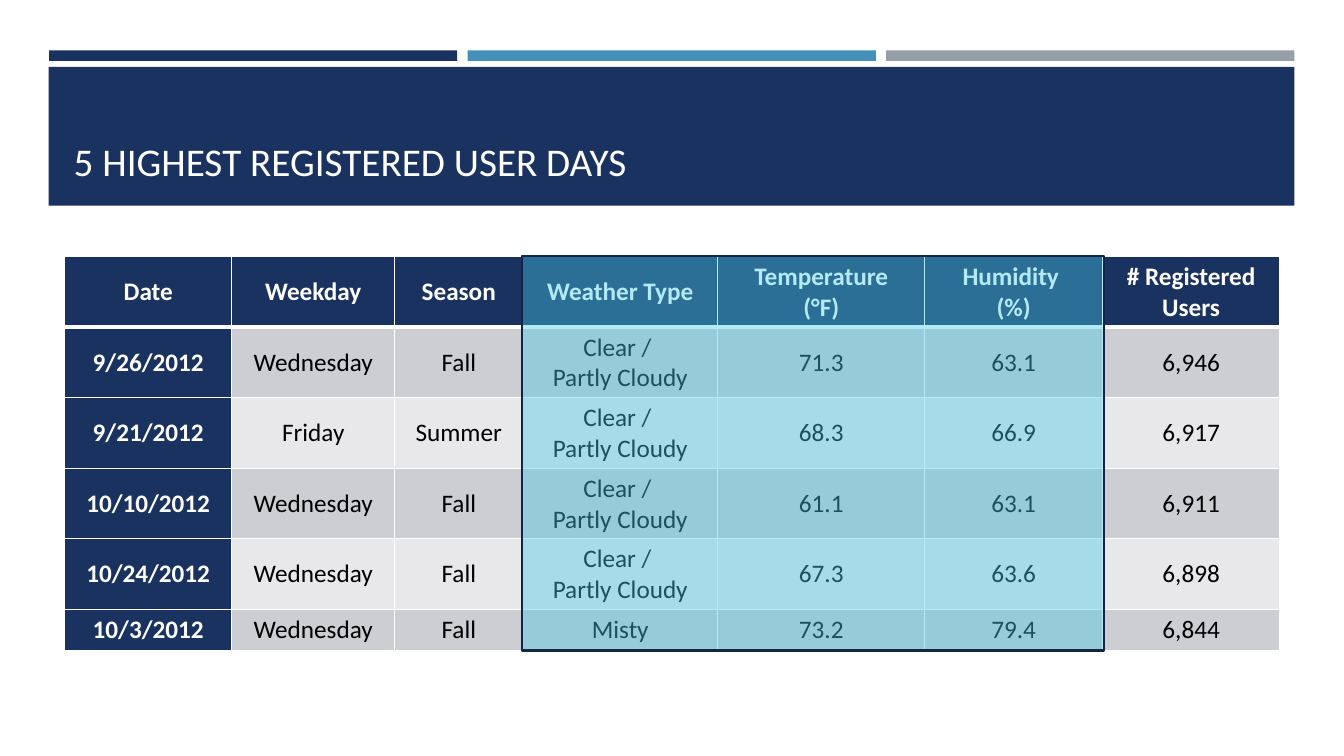
from dataclasses import dataclass

from pptx import Presentation
from pptx import util as u
from pptx.dml import color
from pptx.enum import shapes, text
from pptx.oxml import parse_xml
from pptx.oxml import ns


@dataclass(frozen=True)
class Theme:
    font: str = "Calibri"
    title: float = 28
    body: float = 18
    navy: str = "1A3260"
    blue: str = "4590B8"
    gray: str = "969FA7"
    white: str = "FFFFFF"
    black: str = "000000"
    odd: str = "CDCED2"
    even: str = "E8E8EA"
    glow: str = "45CBE8"
    edge: str = "132547"


class Deck:
    """Draws styled elements on the current slide, with lengths in points."""

    def __init__(self, theme, width, height):
        self.theme = theme
        self.prs = Presentation()
        self.prs.slide_width = u.Pt(width)
        self.prs.slide_height = u.Pt(height)
        self.slide = self.prs.slides.add_slide(self.prs.slide_layouts[6])

    def paint(self, fill, hue):
        fill.solid()
        fill.fore_color.rgb = color.RGBColor.from_string(hue)

    def rect(self, box, hue, alpha=None, line=None, weight=1):
        shape = self.slide.shapes.add_shape(
            shapes.MSO_SHAPE.RECTANGLE, *map(u.Pt, box))
        shape.shadow.inherit = False
        self.paint(shape.fill, hue)
        if alpha is not None:
            tone = shape._element.spPr.find(".//" + ns.qn("a:srgbClr"))
            tone.append(parse_xml(
                f'<a:alpha {ns.nsdecls("a")} val="{alpha * 1000}"/>'))
        if line:
            self.paint(shape.line.fill, line)
            shape.line.width = u.Pt(weight)
        else:
            shape.line.fill.background()

    def label(self, frame, words, size, hue, bold=False, align=None):
        for i, part in enumerate(words.split("\n")):
            para = frame.add_paragraph() if i else frame.paragraphs[0]
            para.alignment = align
            run = para.add_run()
            run.text = part
            run.font.name = self.theme.font
            run.font.size = u.Pt(size)
            run.font.bold = bold
            run.font.color.rgb = color.RGBColor.from_string(hue)

    def title(self, box, words):
        frame = self.slide.shapes.add_textbox(*map(u.Pt, box)).text_frame
        frame.word_wrap = True
        frame.vertical_anchor = text.MSO_ANCHOR.BOTTOM
        self.label(frame, words, self.theme.title, self.theme.white)

    def border(self, cell, widths):
        props = cell._tc.get_or_add_tcPr()
        for i, (side, width) in enumerate(widths.items()):
            props.insert(i, parse_xml(
                f'<a:ln{side} {ns.nsdecls("a")} w="{u.Pt(width)}">'
                f'<a:solidFill><a:srgbClr val="{self.theme.white}"/>'
                f'</a:solidFill></a:ln{side}>'))

    def table(self, left, top, cols, height, rows):
        t = self.theme
        grid = self.slide.shapes.add_table(
            len(rows), len(cols), u.Pt(left), u.Pt(top),
            u.Pt(sum(cols)), u.Pt(height * len(rows))).table
        for col, width in zip(grid.columns, cols):
            col.width = u.Pt(width)
        for r, row in enumerate(rows):
            grid.rows[r].height = u.Pt(height)
            for c, words in enumerate(row):
                cell = grid.cell(r, c)
                head = r == 0 or c == 0
                band = t.odd if r % 2 else t.even
                self.paint(cell.fill, t.navy if head else band)
                cell.vertical_anchor = text.MSO_ANCHOR.MIDDLE
                self.label(cell.text_frame, words, t.body,
                           t.white if head else t.black, head,
                           text.PP_ALIGN.CENTER)
                self.border(cell, {"L": 1, "R": 1,
                                   "T": 3 if r == 1 else 1,
                                   "B": 3 if r == 0 else 1})

    def save(self):
        self.prs.save("out.pptx")


CLEAR = "Clear / \nPartly Cloudy"
DAYS = [
    ("Date", "Weekday", "Season", "Weather Type", "Temperature\n(°F)",
     "Humidity \n(%)", "# Registered Users"),
    ("9/26/2012", "Wednesday", "Fall", CLEAR, "71.3", "63.1", "6,946"),
    ("9/21/2012", "Friday", "Summer", CLEAR, "68.3", "66.9", "6,917"),
    ("10/10/2012", "Wednesday", "Fall", CLEAR, "61.1", "63.1", "6,911"),
    ("10/24/2012", "Wednesday", "Fall", CLEAR, "67.3", "63.6", "6,898"),
    ("10/3/2012", "Wednesday", "Fall", "Misty", "73.2", "79.4", "6,844"),
]


def main():
    theme = Theme()
    deck = Deck(theme, 960, 540)
    for i, hue in enumerate((theme.navy, theme.blue, theme.gray)):
        deck.rect((35 + 299 * i, 36, 291.6, 7.5), hue)
    deck.rect((34.8, 47.8, 889.8, 99.2), theme.navy)
    deck.title((45.6, 57.6, 868.3, 77.8), "5 HIGHEST REGISTERED USER DAYS")
    deck.table(46.2, 183.2, (119.4, 116.4, 91.5, 139.2, 148, 126.8, 126.8),
               29.5, DAYS)
    deck.rect((373, 183, 415.5, 281.5), theme.glow, 40, theme.edge, 1.75)
    deck.save()


if __name__ == "__main__":
    main()
